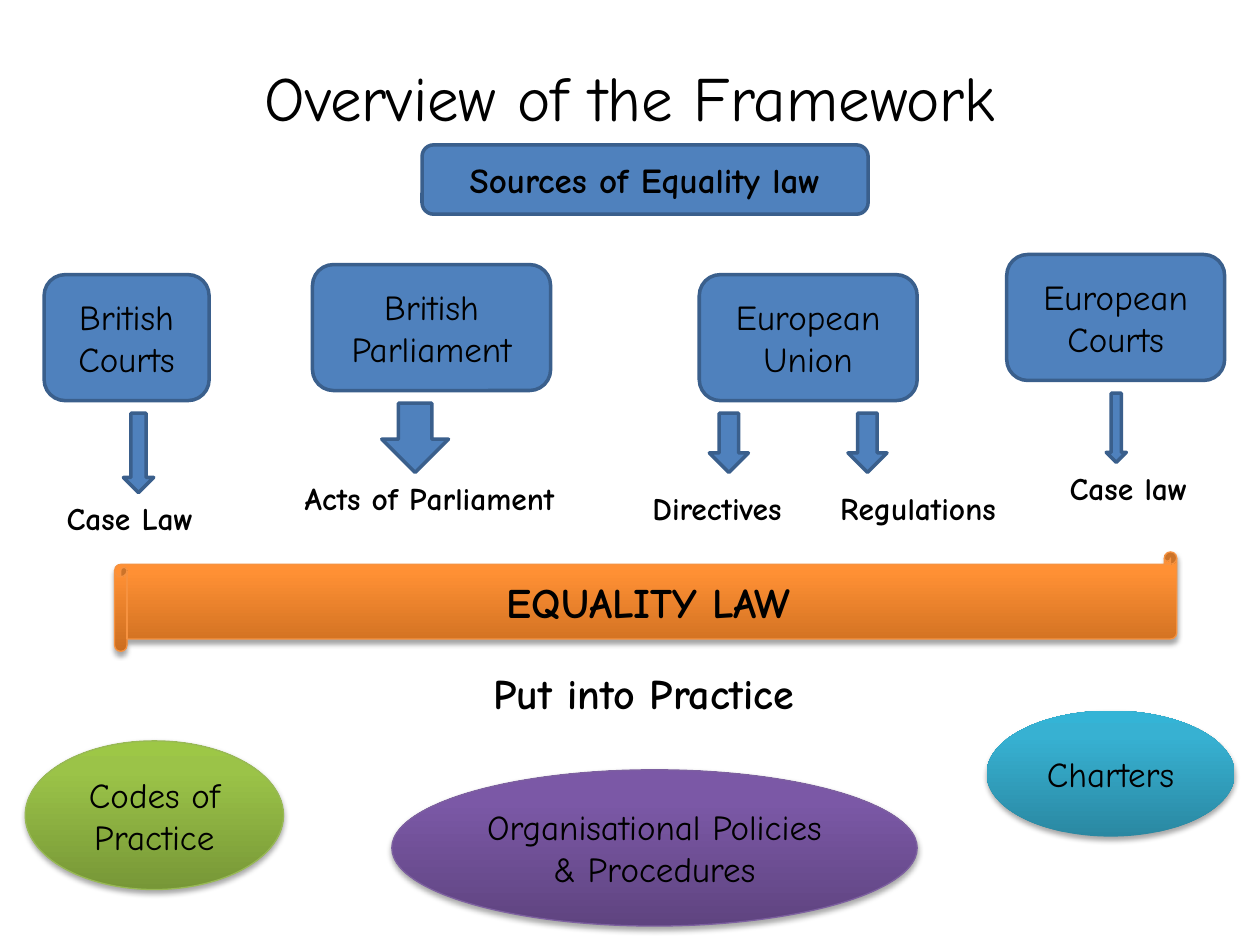
from copy import deepcopy
from lxml.etree import SubElement
from pptx import Presentation
from pptx.dml.color import RGBColor
from pptx.enum.shapes import MSO_SHAPE as Shape
from pptx.enum.text import MSO_ANCHOR as Anchor, MSO_AUTO_SIZE as AutoSize, PP_ALIGN as Align
from pptx.oxml.ns import qn
from pptx.util import Inches, Pt

FONT = "Comic Neue"
BLACK = RGBColor(0x00, 0x00, 0x00)
BLUE = RGBColor(0x4F, 0x81, 0xBD)
NAVY = RGBColor(0x3A, 0x5F, 0x8C)
ORANGE = [RGBColor(0xCC, 0x6E, 0x20), RGBColor(0xFF, 0x90, 0x34), RGBColor(0xFF, 0x91, 0x36)]
PURPLE = [RGBColor(0x5F, 0x44, 0x80), RGBColor(0x7B, 0x58, 0xA6), RGBColor(0x7C, 0x57, 0xA8)]
GREEN = [RGBColor(0x77, 0x97, 0x37), RGBColor(0x9B, 0xC3, 0x48), RGBColor(0x9D, 0xC7, 0x46)]
TEAL = [RGBColor(0x2A, 0x88, 0xA2), RGBColor(0x37, 0xB1, 0xD2), RGBColor(0x34, 0xB4, 0xD6)]
ORANGE_EDGE = RGBColor(0xF6, 0x92, 0x40)
PURPLE_EDGE = RGBColor(0x7D, 0x60, 0xA0)
GREEN_EDGE = RGBColor(0x98, 0xB9, 0x55)

COLUMNS, ROWS = 100, 75
WIDTH, HEIGHT = Inches(10), Inches(7.5)
SOURCE_ROWS, ARROW_GAP, OUTPUT_DROP, OUTPUT_ROWS = 10, 1, 16.5, 4

TITLE = ("Overview of the Framework", (5, 3, 90, 9.3))
HEADING = ("Sources of Equality law", (33.5, 11.5, 35.4, 5.5))
PRACTICE = ("Put into Practice", (38.2, 52.5, 29.3, 5))
# Each source: name, left, top, width, outputs (name, left, width, arrow left, arrow width, arrow rows)
SOURCES = [
    ("British Courts", 3.5, 21.8, 13.1, [("Case Law", 4.3, 13.2, 9.8, 2.4, 6.3)]),
    ("British Parliament", 24.8, 21, 18.9, [("Acts of Parliament", 23.2, 25, 30.3, 5.3, 5.5)]),
    ("European Union", 55.5, 21.8, 17.3, [("Directives", 50.8, 14.2, 56.3, 3.1, 4.7),
                                          ("Regulations", 65.7, 15.6, 67.3, 3.1, 4.7)]),
    ("European Courts", 79.9, 20.2, 17.3, [("Case law", 83.9, 12.5, 87.8, 1.6, 5.5)]),
]
GLOSSY = [
    ("Organisational Policies & Procedures", Shape.OVAL, (31.1, 61.1, 41.7, 12.4), PURPLE, PURPLE_EDGE, 20, False),
    ("Codes of Practice", Shape.OVAL, (2, 58.8, 20.5, 11.8), GREEN, GREEN_EDGE, 20, False),
    ("Charters", Shape.OVAL, (78.3, 56.4, 19.7, 10), TEAL, None, 20, False),
    ("EQUALITY LAW", Shape.HORIZONTAL_SCROLL, (9.1, 43.8, 84.3, 7.9), ORANGE, ORANGE_EDGE, 24, True),
]


def place(area):
    left, top, width, height = area
    return (round(left * WIDTH / COLUMNS), round(top * HEIGHT / ROWS),
            round(width * WIDTH / COLUMNS), round(height * HEIGHT / ROWS))


def write(box, text, size, bold=False, align=Align.CENTER, anchor=Anchor.MIDDLE):
    frame = box.text_frame
    frame.vertical_anchor = anchor
    para = frame.paragraphs[0]
    para.alignment = align
    span = para.add_run()
    span.text = text
    span.font.name, span.font.size, span.font.bold = FONT, Pt(size), bold
    span.font.color.rgb = BLACK


def add_label(page, text, area, size):
    box = page.shapes.add_textbox(*place(area))
    box.text_frame.word_wrap = False
    box.text_frame.auto_size = AutoSize.SHAPE_TO_FIT_TEXT
    write(box, text, size, True, Align.LEFT, Anchor.TOP)


def add_flat(page, kind, area):
    box = page.shapes.add_shape(kind, *place(area))
    box.shadow.inherit = False
    box.fill.solid()
    box.fill.fore_color.rgb = BLUE
    box.line.color.rgb = NAVY
    box.line.width = Pt(2)
    return box


def add_glossy(page, text, kind, area, colors, edge, size, bold):
    box = page.shapes.add_shape(kind, *place(area))
    box.fill.gradient()
    box.fill.gradient_angle = 90
    stops = box.element.spPr.find(".//" + qn("a:gsLst"))
    stops.append(deepcopy(stops[0]))
    for stop, position, color in zip(box.fill.gradient_stops, (0, 0.8, 1), colors):
        stop.position = position
        stop.color.rgb = color
    if edge is None:
        box.line.fill.background()
    else:
        box.line.color.rgb = edge
        box.line.width = Pt(0.75)
    box.shadow.inherit = False
    effects = box.element.spPr.find(qn("a:effectLst"))
    shadow = SubElement(effects, qn("a:outerShdw"), blurRad=str(Pt(3.1)), dist=str(Pt(1.8)),
                        dir="5400000", rotWithShape="0")
    tone = SubElement(shadow, qn("a:srgbClr"), val=str(BLACK))
    SubElement(tone, qn("a:alpha"), val="35000")
    write(box, text, size, bold)


def add_source(page, name, left, top, width, outputs):
    write(add_flat(page, Shape.ROUNDED_RECTANGLE, (left, top, width, SOURCE_ROWS)), name, 20)
    arrow_top = top + SOURCE_ROWS + ARROW_GAP
    for label, label_left, label_width, arrow_left, arrow_width, arrow_rows in outputs:
        add_flat(page, Shape.DOWN_ARROW, (arrow_left, arrow_top, arrow_width, arrow_rows))
        label_top = max(top + OUTPUT_DROP, arrow_top + arrow_rows)
        add_label(page, label, (label_left, label_top, label_width, OUTPUT_ROWS), 18)


def main():
    """Build the slide on the framework of equality law."""
    deck = Presentation()
    deck.slide_width, deck.slide_height = WIDTH, HEIGHT
    page = deck.slides.add_slide(deck.slide_layouts[5])
    title = page.shapes.title
    title.left, title.top, title.width, title.height = place(TITLE[1])
    write(title, TITLE[0], 36)
    write(add_flat(page, Shape.ROUNDED_RECTANGLE, HEADING[1]), HEADING[0], 20, True)
    for source in SOURCES:
        add_source(page, *source)
    add_label(page, *PRACTICE, 24)
    for item in GLOSSY:
        add_glossy(page, *item)
    deck.save("out.pptx")


if __name__ == "__main__":
    main()
